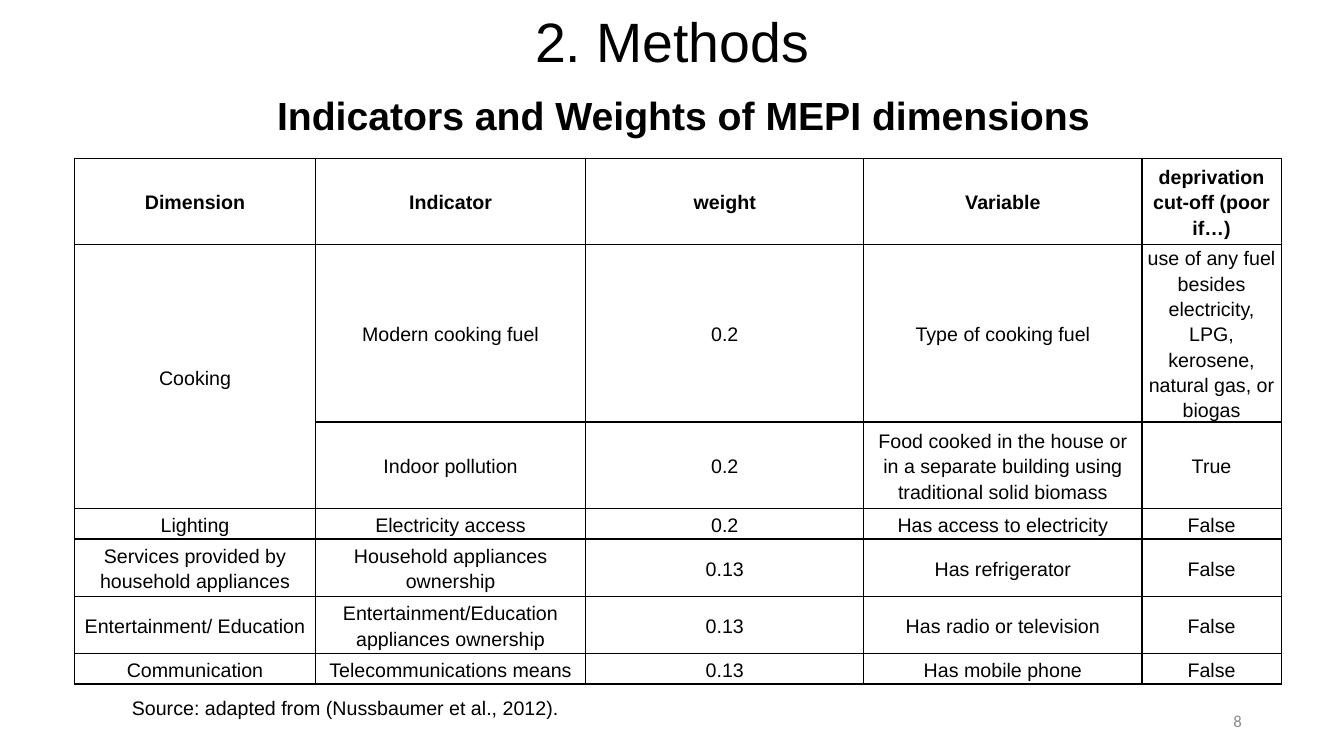
import lxml.etree
import pptx
import pptx.dml.color
import pptx.enum.text
import pptx.oxml.ns
import pptx.util

Pt = pptx.util.Pt
RGBColor = pptx.dml.color.RGBColor
ALIGN = pptx.enum.text.PP_ALIGN
ANCHOR = pptx.enum.text.MSO_ANCHOR
AUTO_SIZE = pptx.enum.text.MSO_AUTO_SIZE
qn = pptx.oxml.ns.qn

BLACK = RGBColor(0x00, 0x00, 0x00)
GREY = RGBColor(0x8C, 0x8C, 0x8C)

COLUMNS = [172.1, 193, 198.7, 198.7, 99.4]
ROWS = [61.9, 124.6, 61.9, 21.6, 41, 41, 21.6]
INDICATORS = [
    ["Dimension", "Indicator", "weight", "Variable", "deprivation cut-off (poor if…)"],
    ["Cooking", "Modern cooking fuel", "0.2", "Type of cooking fuel",
     "use of any fuel besides electricity, LPG, kerosene, natural gas, or biogas"],
    ["", "Indoor pollution", "0.2",
     "Food cooked in the house or in a separate building using traditional solid biomass", "True"],
    ["Lighting", "Electricity access", "0.2", "Has access to electricity", "False"],
    ["Services provided by household appliances", "Household appliances ownership", "0.13",
     "Has refrigerator", "False"],
    ["Entertainment/ Education", "Entertainment/Education appliances ownership", "0.13",
     "Has radio or television", "False"],
    ["Communication", "Telecommunications means", "0.13", "Has mobile phone", "False"],
]


def set_all(obj, values):
    for name, value in values.items():
        setattr(obj, name, value)


class MethodsSlide:
    font = "Arial"
    cell_format = {
        "vertical_anchor": ANCHOR.MIDDLE,
        "margin_left": Pt(3.6),
        "margin_right": Pt(3.6),
        "margin_top": 0,
        "margin_bottom": 0,
    }

    def __init__(self, prs):
        self.s = prs.slides.add_slide(prs.slide_layouts[5])

    def add_run(self, tf, text, size, para, color=BLACK, bold=False, font=None):
        p = tf.paragraphs[0]
        set_all(p, para)
        r = p.add_run()
        r.text = text
        set_all(r.font, {"name": font or self.font, "size": Pt(size), "bold": bold})
        r.font.color.rgb = color

    def title(self, text, left, top, width, height, size):
        sp = self.s.shapes.title
        set_all(sp, {"left": Pt(left), "top": Pt(top), "width": Pt(width), "height": Pt(height)})
        set_all(sp.text_frame, {"vertical_anchor": ANCHOR.MIDDLE, "auto_size": AUTO_SIZE.NONE})
        self.add_run(sp.text_frame, text, size, {"alignment": ALIGN.CENTER, "line_spacing": 0.9})

    def text(self, text, left, top, width, height, size, para, anchor=ANCHOR.TOP, **style):
        sp = self.s.shapes.add_textbox(Pt(left), Pt(top), Pt(width), Pt(height))
        set_all(sp.text_frame, {"word_wrap": True, "vertical_anchor": anchor})
        self.add_run(sp.text_frame, text, size, para, **style)

    def borders(self, cell):
        tc_pr = cell._tc.get_or_add_tcPr()
        for i, side in enumerate(("a:lnL", "a:lnR", "a:lnT", "a:lnB")):
            ln = lxml.etree.Element(qn(side), w=str(Pt(1)))
            fill = lxml.etree.SubElement(ln, qn("a:solidFill"))
            lxml.etree.SubElement(fill, qn("a:srgbClr"), val=str(BLACK))
            tc_pr.insert(i, ln)

    def table(self, values, columns, rows, left, top, size):
        frame = self.s.shapes.add_table(
            len(rows), len(columns), Pt(left), Pt(top), Pt(sum(columns)), Pt(sum(rows)))
        table = frame.table
        set_all(table, {"first_row": False, "horz_banding": False})
        for column, width in zip(table.columns, columns):
            column.width = Pt(width)
        para = {"alignment": ALIGN.CENTER, "line_spacing": 1.15, "space_after": Pt(8)}
        for i, height in enumerate(rows):
            table.rows[i].height = Pt(height)
            for j, value in enumerate(values[i]):
                cell = table.cell(i, j)
                set_all(cell, self.cell_format)
                cell.fill.background()
                self.borders(cell)
                if value:
                    self.add_run(cell.text_frame, value, size, para, bold=i == 0)
        return table


def main():
    prs = pptx.Presentation()
    set_all(prs, {"slide_width": Pt(960), "slide_height": Pt(540)})
    slide = MethodsSlide(prs)
    slide.title("2. Methods", 66.2, 6.5, 828, 51.1, 39.6)
    table = slide.table(INDICATORS, COLUMNS, ROWS, 53.3, 113, 14)
    table.cell(1, 0).merge(table.cell(2, 0))
    slide.text("8", 678.2, 500.4, 216, 28.8, 12, {"alignment": ALIGN.RIGHT},
               anchor=ANCHOR.MIDDLE, color=GREY, font="Calibri")
    slide.text("Indicators and Weights of MEPI dimensions", 190.8, 65.5, 622.8, 42.5, 28,
               {"alignment": ALIGN.JUSTIFY, "line_spacing": 0.9,
                "space_before": Pt(10), "space_after": Pt(10)}, bold=True)
    slide.text("Source: adapted from (Nussbaumer et al., 2012).", 87.1, 491, 372.2, 40.3, 14,
               {"alignment": ALIGN.JUSTIFY, "line_spacing": 1.15,
                "space_before": Pt(10), "space_after": Pt(6)})
    prs.save("out.pptx")


if __name__ == "__main__":
    main()
